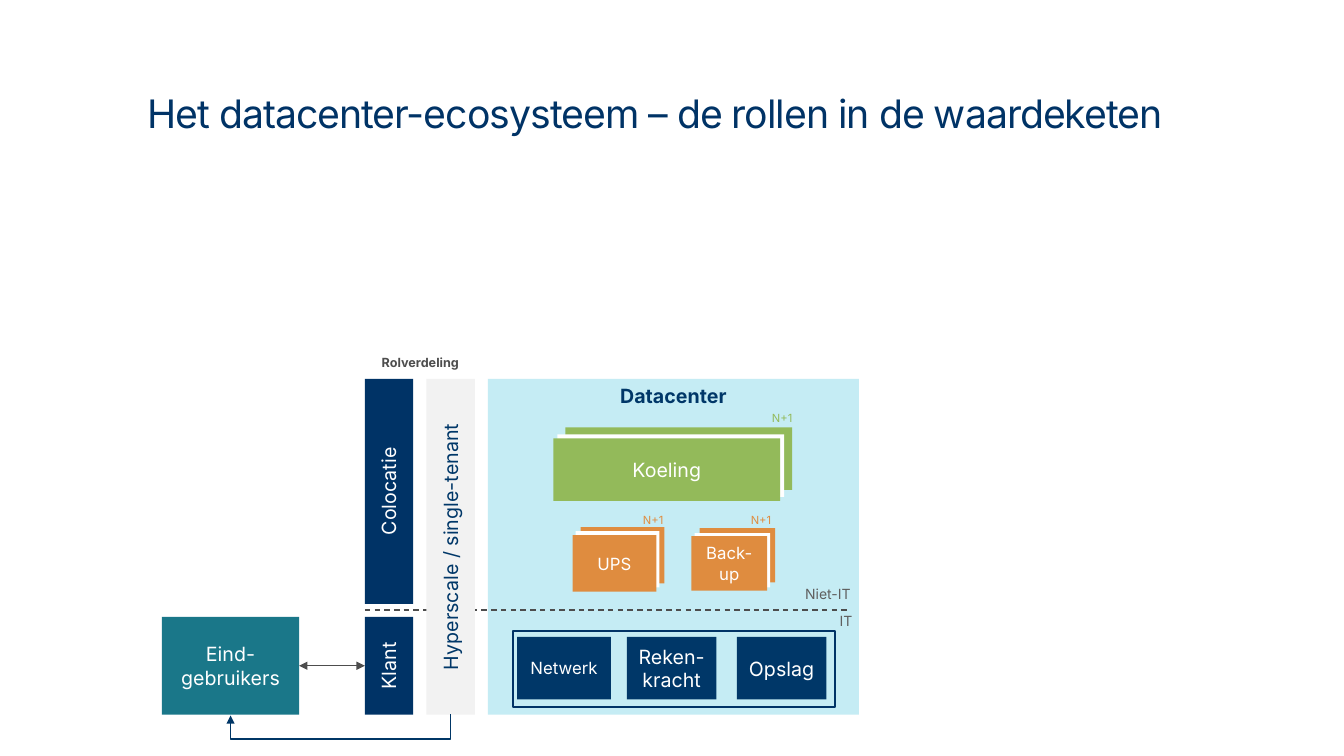
import pptx
import pptx.util
import pptx.dml.color
import pptx.enum.dml
import pptx.enum.shapes
import pptx.enum.text
import pptx.oxml

Pt = pptx.util.Pt
ALIGN = pptx.enum.text.PP_ALIGN
ANCHOR = pptx.enum.text.MSO_ANCHOR

# Content: boxes are (left, top, width, height) in points
TITLE = "Het datacenter-ecosysteem – de rollen in de waardeketen"
TITLE_BOX = (98, 35.3, 774, 90)
TOP, BOTTOM = 270.7, 510.5
ROLE_WIDTH = 34.6
DATACENTER = ("Datacenter", (348.5, TOP, 265, BOTTOM - TOP))
# text, front box, (dx, dy) of white middle, (dx, dy) of back, colour, size
STACKS = [
    ("Koeling", (395.3, 313.2, 162, 44.6), (2.9, -2.9), (8.6, -7.9), "green", "body"),
    ("UPS", (409, 382.3, 59.8, 40.3), (2.2, -2.9), (5.8, -5.8), "orange", "small"),
    ("Back-up", (493.9, 383, 54, 38.9), (2.2, -2.2), (5.8, -5.8), "orange", "small"),
]
IT_FRAME = (366.5, 450.7, 229.7, 54)
IT_TOP, IT_HEIGHT = 455, 44.6
IT_PARTS = [  # text, left, width, size
    ("Netwerk", 369.4, 67, "small"),
    ("Reken-kracht", 447.8, 64, "body"),
    ("Opslag", 526.3, 64, "body"),
]
CUSTOMER_TOP = 440.6
CUSTOMER_HEIGHT = BOTTOM - CUSTOMER_TOP
ROLES = [  # text, box, fill, text colour
    ("Colocatie", (260.6, TOP, ROLE_WIDTH, 160.6), "title", "white"),
    ("Klant", (260.6, CUSTOMER_TOP, ROLE_WIDTH, CUSTOMER_HEIGHT), "title", "white"),
    ("Hyperscale / single-tenant", (304.6, TOP, ROLE_WIDTH, BOTTOM - TOP), "pale", "navy"),
]
USERS = ("Eind-gebruikers", (115.7, CUSTOMER_TOP, 98, CUSTOMER_HEIGHT))
LABELS = [  # text, box, alignment, format
    ("Rolverdeling", (259.2, 249.8, 82, 18), ALIGN.CENTER, ("dark", "label", True)),
    ("IT", (592.6, 434, 25.2, 19.4), ALIGN.LEFT, ("grey", "side", False)),
    ("Niet-IT", (568.1, 414.5, 50.4, 19.4), ALIGN.LEFT, ("grey", "side", False)),
    ("N+1", (541.4, 290.3, 34.6, 17), ALIGN.CENTER, ("green", "tiny", False)),
    ("N+1", (526.3, 363, 34.6, 17), ALIGN.CENTER, ("orange", "tiny", False)),
    ("N+1", (449.3, 363, 34.6, 17), ALIGN.CENTER, ("orange", "tiny", False)),
]
SPLIT_LINE = (260.6, 435.6, 607.7, 435.6)
RETURN_DROP = 18

THEME = {
    "font": "Inter",
    "colours": {
        "title": "003366", "navy": "003768", "sky": "C5ECF4", "green": "93BA5A",
        "orange": "DF8C3F", "white": "FFFFFF", "dark": "4D4D4D", "grey": "5F5F5F",
        "pale": "F2F2F2", "teal": "1A7789", "return": "003666",
    },
    "sizes": {"title": 28, "body": 14, "small": 12, "side": 10, "label": 9, "tiny": 8},
}


def colour(name):
    return pptx.dml.color.RGBColor.from_string(THEME["colours"][name])


def write(shape, text, text_format, align=ALIGN.CENTER, anchor=ANCHOR.MIDDLE):
    colour_name, size, bold = text_format
    frame = shape.text_frame
    settings = {"word_wrap": True, "vertical_anchor": anchor,
                "auto_size": pptx.enum.text.MSO_AUTO_SIZE.NONE}
    for name, value in settings.items():
        setattr(frame, name, value)
    para = frame.paragraphs[0]
    para.alignment = align
    span = para.add_run()
    span.text = text
    values = {"name": THEME["font"], "size": Pt(THEME["sizes"][size]), "bold": bold}
    for name, value in values.items():
        setattr(span.font, name, value)
    span.font.color.rgb = colour(colour_name)
    return span


def add_box(shapes, box, fill=None, outline=None):
    shape = shapes.add_shape(pptx.enum.shapes.MSO_SHAPE.RECTANGLE, *map(Pt, box))
    shape.shadow.inherit = False
    if fill:
        shape.fill.solid()
        shape.fill.fore_color.rgb = colour(fill)
    else:
        shape.fill.background()
    if outline:
        shape.line.color.rgb = colour(outline)
        shape.line.width = Pt(1.5)
    else:
        shape.line.fill.background()
    return shape


def add_line(shapes, kind, ends, colour_name, width, arrows=()):
    line = shapes.add_connector(kind, *map(Pt, ends))
    line.line.color.rgb = colour(colour_name)
    line.line.width = Pt(width)
    outline = line.line.fill and line.element.spPr.find(pptx.oxml.ns.qn("a:ln"))
    for arrow in arrows:
        pptx.oxml.parse_xml(f'<a:{arrow} {pptx.oxml.ns.nsdecls("a")} type="triangle"/>')
        outline.append(pptx.oxml.parse_xml(
            f'<a:{arrow} {pptx.oxml.ns.nsdecls("a")} type="triangle"/>'))
    line.element.spPr.append(pptx.oxml.parse_xml(
        f'<a:effectLst {pptx.oxml.ns.nsdecls("a")}/>'))
    return line


def add_stack(shapes, text, front, middle_shift, back_shift, fill, size):
    group = shapes.add_group_shape()
    left, top, width, height = front
    layers = [(back_shift, fill), (middle_shift, "white"), ((0, 0), fill)]
    for (right, down), layer_fill in layers:
        box = add_box(group.shapes, (left + right, top + down, width, height), layer_fill)
    write(box, text, ("white", size, False))


def add_return_arrow(shapes, users, hyperscale):
    start = hyperscale[0] + hyperscale[2] / 2
    end = users[0] + users[2] / 2
    span, rise = start - end, 1
    left, top = (start + end - rise) / 2, BOTTOM - span / 2
    # The elbow is laid out upright, then turned a quarter
    arrow = add_line(shapes, pptx.enum.shapes.MSO_CONNECTOR.ELBOW,
                     (left, top, left + rise, top + span), "return", 0.75, ["tailEnd"])
    properties = arrow.element.spPr
    properties.find(pptx.oxml.ns.qn("a:xfrm")).set("rot", "5400000")
    guides = properties.find(pptx.oxml.ns.qn("a:prstGeom")).get_or_add_avLst()
    guides.append(pptx.oxml.parse_xml(
        f'<a:gd {pptx.oxml.ns.nsdecls("a")} name="adj1" '
        f'fmla="val {RETURN_DROP * 100000 // rise}"/>'))


def main():
    deck = pptx.Presentation()
    deck.slide_width, deck.slide_height = Pt(960), Pt(540)
    page = deck.slides.add_slide(deck.slide_layouts[5])
    shapes = page.shapes
    straight = pptx.enum.shapes.MSO_CONNECTOR.STRAIGHT

    # Title
    title = shapes.title
    for name, value in zip(("left", "top", "width", "height"), TITLE_BOX):
        setattr(title, name, Pt(value))
    span = write(title, TITLE, ("title", "title", False), ALIGN.LEFT)
    span.font._element.set("spc", "-70")

    # Datacenter with its installations
    name, box = DATACENTER
    write(add_box(shapes, box, "sky"), name, ("navy", "body", True), anchor=ANCHOR.TOP)
    for stack in STACKS:
        add_stack(shapes, *stack)

    # IT equipment
    for text, left, width, size in IT_PARTS:
        part = add_box(shapes, (left, IT_TOP, width, IT_HEIGHT), "navy")
        write(part, text, ("white", size, False))
    add_box(shapes, IT_FRAME, outline="title")

    # Line between non-IT and IT, behind the role columns
    split = add_line(shapes, straight, SPLIT_LINE, "dark", 1)
    split.line.dash_style = pptx.enum.dml.MSO_LINE.DASH

    # Roles
    roles = {}
    for text, box, fill, text_colour in ROLES:
        roles[text] = add_box(shapes, box, fill)
        write(roles[text], text, (text_colour, "body", False))
        roles[text].element.txBody.bodyPr.set("vert", "vert270")

    # Labels
    for text, box, align, text_format in LABELS:
        label = shapes.add_textbox(*map(Pt, box))
        write(label, text, text_format, align, ANCHOR.TOP)

    # End users and their arrows
    text, box = USERS
    users = add_box(shapes, box, "teal")
    write(users, text, ("white", "body", False))
    link = add_line(shapes, straight, (0, 0, 0, 0), "dark", 1, ["headEnd", "tailEnd"])
    link.begin_connect(users, 3)
    link.end_connect(roles["Klant"], 1)
    add_return_arrow(shapes, box, ROLES[2][1])

    deck.save("out.pptx")


if __name__ == "__main__":
    main()
